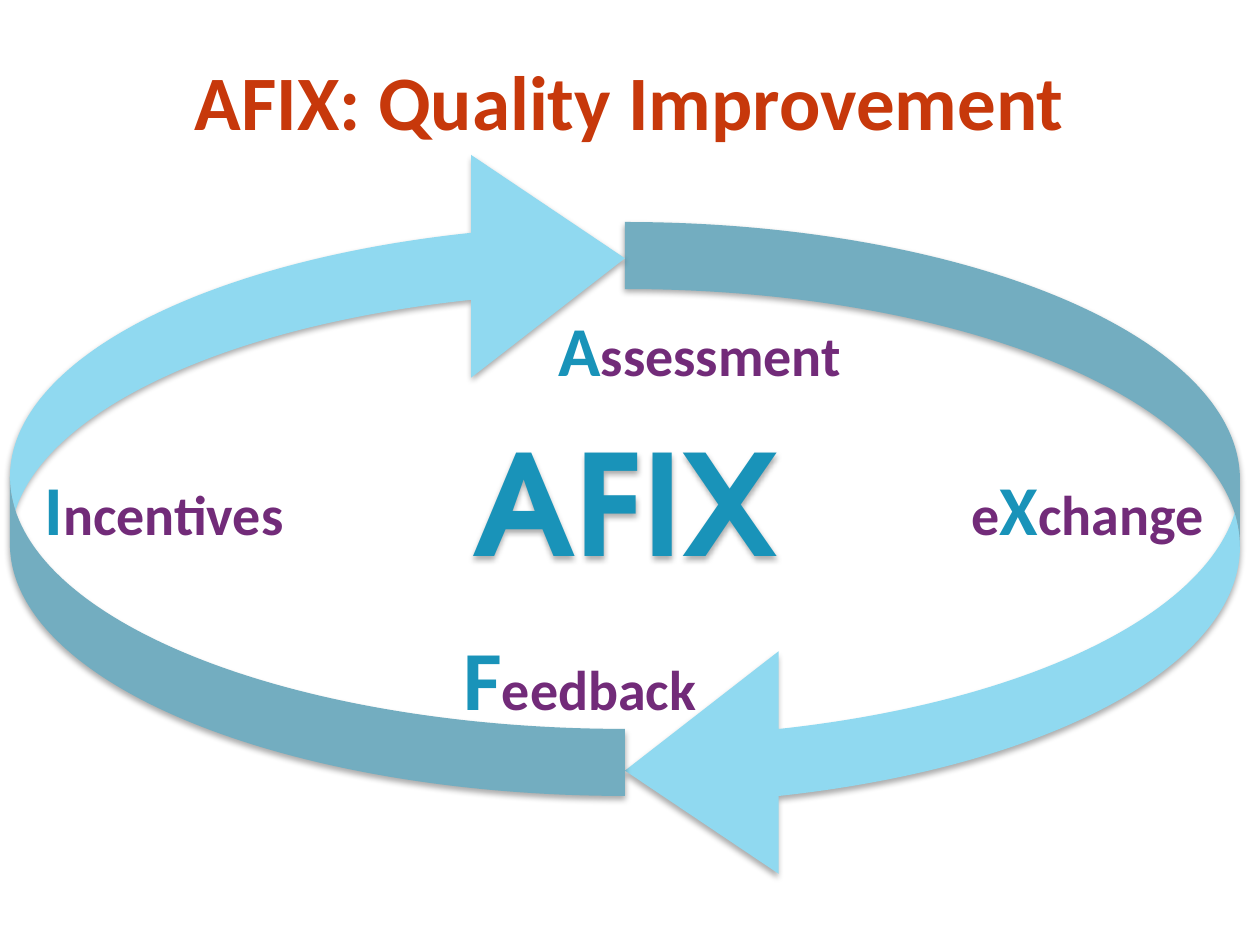
"""Build the AFIX quality improvement cycle slide."""
from dataclasses import dataclass

from lxml import etree
from pptx import Presentation
from pptx import util as u
from pptx.dml.color import RGBColor
from pptx.enum import shapes, text
from pptx.oxml.ns import qn

EMU_PER_PX = 914400 / 126
COLORS = {
    "title": "C7380B",
    "arrow": "90D9F0",
    "initial": "1993B9",
    "word": "722B79",
    "shadow": "000000",
}
ARROW_ADJUSTMENTS = (0.109, 0.362, 0.25)


@dataclass(frozen=True)
class Box:
    left: int
    top: int
    width: int
    height: int

    def emu(self) -> list[int]:
        return [round(px * EMU_PER_PX) for px in (self.left, self.top, self.width, self.height)]


@dataclass(frozen=True)
class Piece:
    wording: str
    size: int
    color: str


@dataclass(frozen=True)
class Label:
    box: Box
    pieces: tuple[Piece, ...]
    align: text.PP_ALIGN = text.PP_ALIGN.LEFT
    face: str = "Calibri"
    shadowed: bool = False


@dataclass(frozen=True)
class Arrow:
    box: Box
    flipped: bool = False


TITLE_BOX = Box(63, 21, 1134, 158)
ARROWS = (
    Arrow(Box(625, 222, 615, 660)),
    Arrow(Box(10, 147, 615, 649), flipped=True),
)
LABELS = (
    Label(Box(546, 300, 388, 97), (Piece("A", 40, "initial"), Piece("ssessment", 32, "word"))),
    Label(
        Box(932, 459, 284, 97),
        (Piece("e", 32, "word"), Piece("X", 40, "initial"), Piece("change", 32, "word")),
        text.PP_ALIGN.RIGHT,
    ),
    Label(Box(32, 459, 388, 97), (Piece("I", 40, "initial"), Piece("ncentives", 32, "word"))),
    Label(Box(451, 620, 388, 115), (Piece("F", 48, "initial"), Piece("eedback", 32, "word"))),
    Label(
        Box(431, 410, 388, 183),
        (Piece("AFIX", 80, "initial"),),
        text.PP_ALIGN.CENTER,
        "TeX Gyre Adventor",
        shadowed=True,
    ),
)


def rgb(name: str) -> RGBColor:
    return RGBColor.from_string(COLORS[name])


def add_shadow(shape) -> None:
    shape.shadow.inherit = False
    effects = shape._element.spPr.find(qn("a:effectLst"))
    shadow = etree.SubElement(
        effects, qn("a:outerShdw"), blurRad=str(u.Pt(3.5)), dist=str(u.Pt(2.2)),
        dir="5400000", rotWithShape="0",
    )
    color = etree.SubElement(shadow, qn("a:srgbClr"), val=COLORS["shadow"])
    etree.SubElement(color, qn("a:alpha"), val="32000")


def write_pieces(paragraph, pieces: tuple[Piece, ...], face: str) -> None:
    paragraph.font.name = face
    paragraph.font.bold = True
    for piece in pieces:
        run = paragraph.add_run()
        run.text = piece.wording
        font = paragraph.font if len(pieces) == 1 else run.font
        font.size = u.Pt(piece.size)
        font.color.rgb = rgb(piece.color)


def add_title(slide) -> None:
    title = slide.shapes.title
    title.left, title.top, title.width, title.height = TITLE_BOX.emu()
    title.text_frame.vertical_anchor = text.MSO_ANCHOR.MIDDLE
    heading = title.text_frame.paragraphs[0]
    heading.alignment = text.PP_ALIGN.CENTER
    write_pieces(heading, (Piece("AFIX: Quality Improvement", 44, "title"),), "Calibri")


def add_arrow(slide, arrow: Arrow) -> None:
    curve = slide.shapes.add_shape(shapes.MSO_SHAPE.CURVED_LEFT_ARROW, *arrow.box.emu())
    for index, adjustment in enumerate(ARROW_ADJUSTMENTS):
        curve.adjustments[index] = adjustment
    curve.fill.solid()
    curve.fill.fore_color.rgb = rgb("arrow")
    curve.line.fill.background()
    add_shadow(curve)
    if arrow.flipped:
        transform = curve._element.spPr.find(qn("a:xfrm"))
        transform.set("flipH", "1")
        transform.set("flipV", "1")


def add_label(slide, label: Label) -> None:
    caption = slide.shapes.add_textbox(*label.box.emu())
    frame = caption.text_frame
    frame.word_wrap = True
    frame.auto_size = text.MSO_AUTO_SIZE.SHAPE_TO_FIT_TEXT
    wording = frame.paragraphs[0]
    wording.alignment = label.align
    write_pieces(wording, label.pieces, label.face)
    if label.shadowed:
        add_shadow(caption)


def main() -> None:
    deck = Presentation()
    deck.slide_width, deck.slide_height = u.Inches(10), u.Inches(7.5)
    slide = deck.slides.add_slide(deck.slide_layouts[5])
    add_title(slide)
    for arrow in ARROWS:
        add_arrow(slide, arrow)
    for label in LABELS:
        add_label(slide, label)
    deck.save("out.pptx")


if __name__ == "__main__":
    main()
